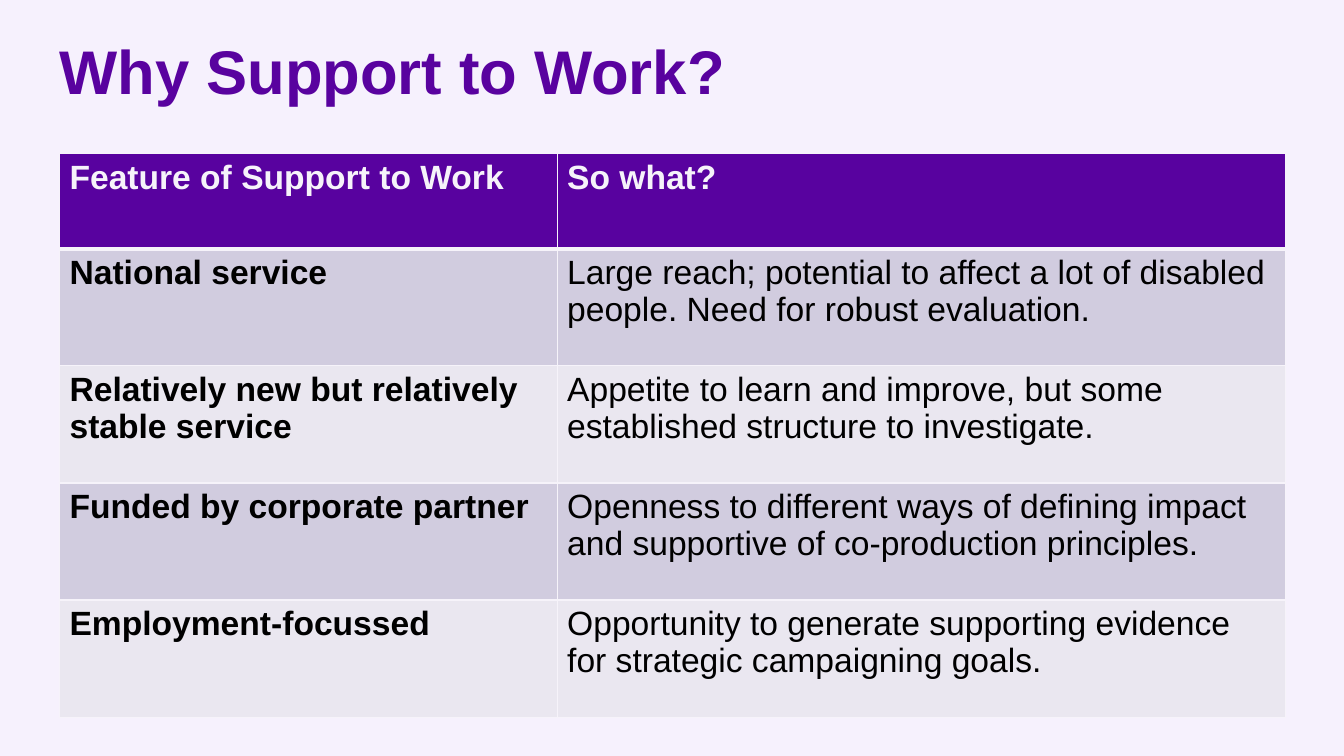
from lxml import etree
from pptx import Presentation, util as u
from pptx.dml.color import RGBColor
from pptx.enum import text
from pptx.oxml.ns import qn

PURPLE, PALE, BLACK = "59029F", "F6F3FA", "000000"


def color(value):
    return RGBColor.from_string(value)


def write(frame, words, size=24, ink=BLACK, bold=False, spacing=None):
    frame.word_wrap = True
    paragraph = frame.paragraphs[0]
    paragraph.alignment = text.PP_ALIGN.LEFT
    if spacing:
        paragraph.line_spacing = spacing
    run = paragraph.add_run()
    run.text = words
    run.font.name = "Arial"
    run.font.size = u.Pt(size)
    run.font.bold = bold
    run.font.color.rgb = color(ink)


deck = Presentation()
deck.slide_width, deck.slide_height = u.Cm(33.87), u.Cm(19.05)
slide = deck.slides.add_slide(deck.slide_layouts[6])
slide.background.fill.solid()
slide.background.fill.fore_color.rgb = color("F6F1FD")

left, width = u.Cm(1.5), u.Cm(30.9)
title = slide.shapes.add_textbox(left, u.Cm(1.02), width, u.Cm(1.7)).text_frame
title.margin_left = title.margin_right = title.margin_top = title.margin_bottom = 0
title.vertical_anchor = text.MSO_ANCHOR.BOTTOM
write(title, "Why Support to Work?", size=44, ink=PURPLE, bold=True, spacing=0.9)

features = [
    ("Feature of Support to Work", "So what?"),
    ("National service",
     "Large reach; potential to affect a lot of disabled people. Need for robust evaluation."),
    ("Relatively new but relatively stable service",
     "Appetite to learn and improve, but some established structure to investigate."),
    ("Funded by corporate partner",
     "Openness to different ways of defining impact and supportive of co-production principles."),
    ("Employment-focussed",
     "Opportunity to generate supporting evidence for strategic campaigning goals."),
]
table = slide.shapes.add_table(len(features), 2, left, u.Cm(3.87), width, u.Cm(14.2)).table
table.columns[0].width, table.columns[1].width = u.Cm(12.54), u.Cm(18.36)

for r, feature in enumerate(features):
    header = r == 0
    table.rows[r].height = u.Cm(2.4 if header else 2.95)
    for c, words in enumerate(feature):
        cell = table.cell(r, c)
        write(cell.text_frame, words, ink=PALE if header else BLACK, bold=header or c == 0)
        cell.fill.solid()
        cell.fill.fore_color.rgb = color("58029F" if header else ("EAE7F0", "D1CCDF")[r % 2])
        properties = cell._tc.get_or_add_tcPr()
        for position, side in enumerate(("lnL", "lnR", "lnT", "lnB")):
            thick = (r, side) in ((0, "lnB"), (1, "lnT"))
            border = etree.Element(qn(f"a:{side}"), w=str(u.Pt(3 if thick else 1)))
            paint = etree.SubElement(border, qn("a:solidFill"))
            etree.SubElement(paint, qn("a:srgbClr"), val=PALE)
            properties.insert(position, border)

deck.save("out.pptx")
